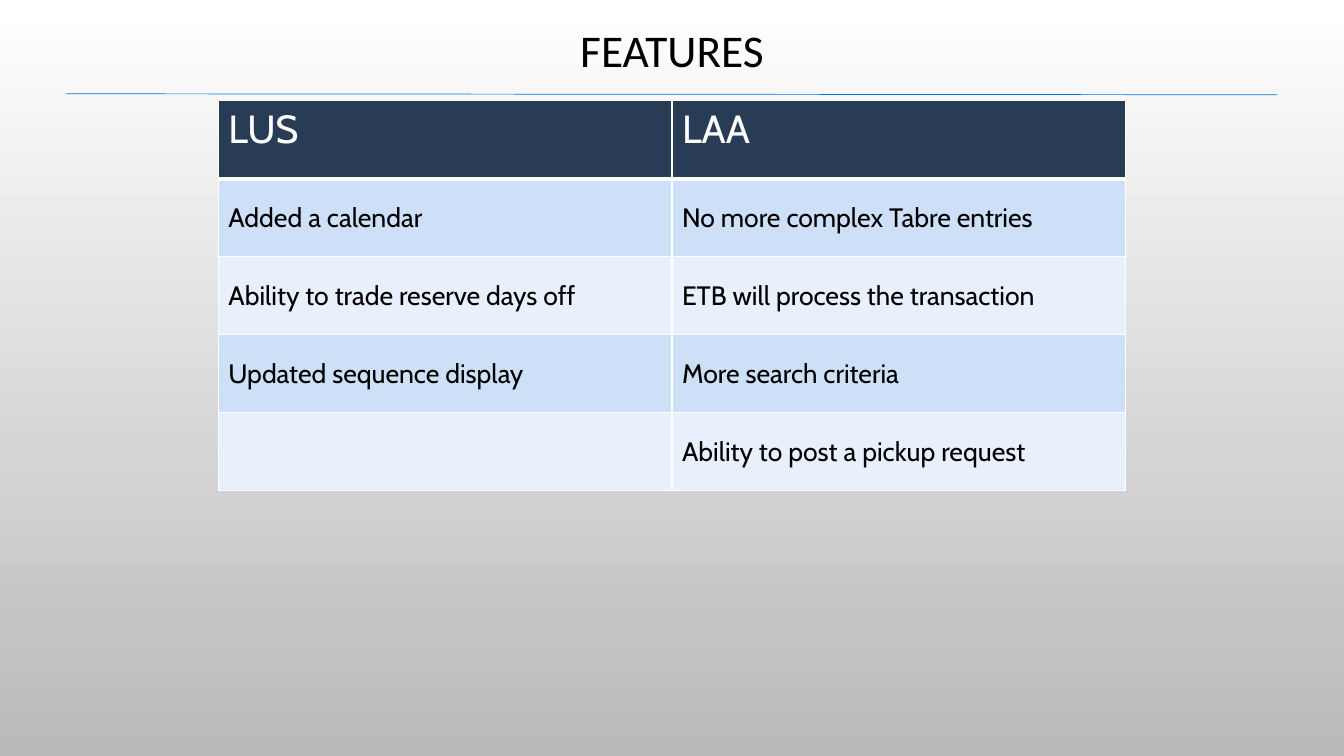
from lxml import etree
from pptx import Presentation
from pptx.dml.color import RGBColor
from pptx.enum.shapes import MSO_CONNECTOR
from pptx.enum.text import MSO_ANCHOR, MSO_AUTO_SIZE, PP_ALIGN
from pptx.oxml import parse_xml
from pptx.oxml.ns import nsdecls, qn
from pptx.util import Pt

STRAIGHT = MSO_CONNECTOR.STRAIGHT
TOP, MIDDLE = MSO_ANCHOR.TOP, MSO_ANCHOR.MIDDLE
CENTER = PP_ALIGN.CENTER
NO_FIT = MSO_AUTO_SIZE.NONE

COLORS = {
    "white": "FFFFFF", "gray": "B9B9B9", "black": "000000",
    "rule": "0078D2", "head": "283C55", "odd": "CDE0F8", "even": "E8F0FC",
}
ROWS = [
    ("LUS", "LAA"),
    ("Added a calendar", "No more complex Tabre entries"),
    ("Ability to trade reserve days off", "ETB will process the transaction"),
    ("Updated sequence display", "More search criteria"),
    ("", "Ability to post a pickup request"),
]
COL_WIDTH, ROW_HEIGHT = 324, 55.73


def color(name):
    return RGBColor.from_string(COLORS[name])


def add_run(para, text, font, size, tint):
    run = para.add_run()
    run.text = text
    run.font.name = font
    run.font.size = Pt(size)
    run.font.color.rgb = color(tint)


def set_back(slide):
    fill = slide.background.fill
    fill.gradient()
    fill.gradient_angle = 270
    for stop, name in zip(fill.gradient_stops, ("white", "gray")):
        stop.color.rgb = color(name)


def add_rule(slide):
    rule = slide.shapes.add_connector(
        STRAIGHT, Pt(47.5), Pt(67), Pt(912.2), Pt(67.7))
    rule.line.color.rgb = color("rule")
    rule.line.width = Pt(0.5)
    etree.SubElement(rule._element.spPr, qn("a:effectLst"))


def set_title(slide, text):
    title = slide.shapes.title
    title.left, title.top = Pt(48), Pt(16.6)
    title.width, title.height = Pt(864), Pt(42.5)
    frame = title.text_frame
    frame.auto_size = NO_FIT
    frame.word_wrap = True
    frame.vertical_anchor = MIDDLE
    para = frame.paragraphs[0]
    para.alignment = CENTER
    para.line_spacing = 0.9
    add_run(para, text, "Calibri", 32.4, "black")


def set_edges(cell, base):
    props = cell._tc.get_or_add_tcPr()
    sides = (("L", 1), ("R", 1), ("T", 1), ("B", base))
    for spot, (side, width) in enumerate(sides):
        edge = parse_xml(
            f'<a:ln{side} {nsdecls("a")} w="{Pt(width)}"><a:solidFill>'
            f'<a:srgbClr val="{COLORS["white"]}"/></a:solidFill></a:ln{side}>')
        props.insert(spot, edge)


def fill_cell(cell, text, row):
    head = row == 0
    cell.fill.solid()
    cell.fill.fore_color.rgb = color(
        "head" if head else "odd" if row % 2 else "even")
    cell.vertical_anchor = TOP if head else MIDDLE
    set_edges(cell, 3 if head else 1)
    if text:
        add_run(cell.text_frame.paragraphs[0], text, "Cabin",
                28 if head else 19, "white" if head else "black")


def add_grid(slide):
    count, cols = len(ROWS), len(ROWS[0])
    table = slide.shapes.add_table(
        count, cols, Pt(156), Pt(72),
        Pt(cols * COL_WIDTH), Pt(count * ROW_HEIGHT)).table
    for col in table.columns:
        col.width = Pt(COL_WIDTH)
    for row, texts in enumerate(ROWS):
        table.rows[row].height = Pt(ROW_HEIGHT)
        for col, text in enumerate(texts):
            fill_cell(table.cell(row, col), text, row)


def main():
    deck = Presentation()
    deck.slide_width, deck.slide_height = Pt(960), Pt(540)
    slide = deck.slides.add_slide(deck.slide_layouts[5])

    # Backdrop and heading
    set_back(slide)
    add_rule(slide)
    set_title(slide, "FEATURES")

    # Feature table
    add_grid(slide)
    deck.save("out.pptx")


if __name__ == "__main__":
    main()
